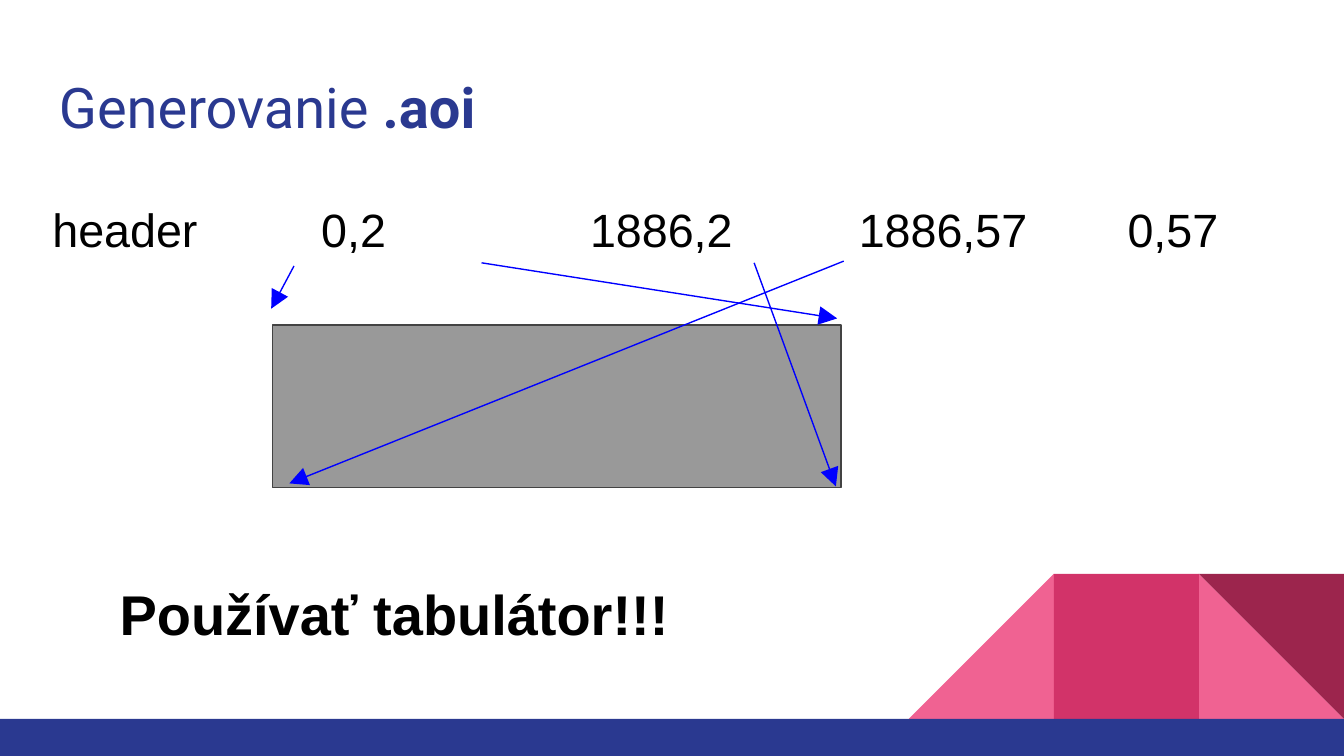
from lxml import etree
from pptx import Presentation
from pptx.dml.color import RGBColor
from pptx.enum import shapes as es, text as et
from pptx.oxml.ns import qn
from pptx.util import Pt

NAVY = RGBColor(0x2A, 0x39, 0x90)
PINK = RGBColor(0xF0, 0x62, 0x92)
ROSE = RGBColor(0xD2, 0x33, 0x69)
WINE = RGBColor(0x9C, 0x25, 0x4D)
GRAY = RGBColor(0x99, 0x99, 0x99)
EDGE = RGBColor(0x43, 0x43, 0x43)
BLUE = RGBColor(0x00, 0x00, 0xFF)
BLACK = RGBColor(0x00, 0x00, 0x00)

WIDE, HIGH = 720, 405
RECT = es.MSO_SHAPE.RECTANGLE
WEDGE = es.MSO_SHAPE.RIGHT_TRIANGLE


def add_form(slide, kind, box, fill, edge=None):
    form = slide.shapes.add_shape(kind, *map(Pt, box))
    form.shadow.inherit = False
    form.fill.solid()
    form.fill.fore_color.rgb = fill
    if edge is None:
        form.line.fill.background()
    else:
        form.line.color.rgb = edge
        form.line.width = Pt(0.75)
    return form


def add_label(slide, box, runs, size, face, color, anchor=et.MSO_ANCHOR.TOP):
    """Place one line of text; runs are (words, bold) pairs."""
    frame = slide.shapes.add_textbox(*map(Pt, box)).text_frame
    pad = Pt(7.2)
    style = dict(word_wrap=True, vertical_anchor=anchor, margin_left=pad,
                 margin_right=pad, margin_top=pad, margin_bottom=pad)
    for key, val in style.items():
        setattr(frame, key, val)
    para = frame.paragraphs[0]
    for words, bold in runs:
        run = para.add_run()
        run.text = words
        for key, val in dict(size=Pt(size), name=face, bold=bold).items():
            setattr(run.font, key, val)
        run.font.color.rgb = color
    return para


def set_tabs(para, step, count):
    stops = etree.SubElement(para._p.get_or_add_pPr(), qn("a:tabLst"))
    for num in range(1, count + 1):
        etree.SubElement(stops, qn("a:tab"), pos=str(Pt(step * num)),
                         algn="l")


def add_arrow(slide, start, end):
    line = slide.shapes.add_connector(es.MSO_CONNECTOR.STRAIGHT,
                                      *map(Pt, start + end))
    line.line.color.rgb = BLUE
    line.line.width = Pt(0.75)
    etree.SubElement(line.line._get_or_add_ln(), qn("a:tailEnd"),
                     type="triangle", w="lg", len="lg")
    etree.SubElement(line._element.spPr, qn("a:effectLst"))


def add_decor(slide, box):
    """Bar along the foot, with a row of square tiles above its right end."""
    left, top, width, height = box
    bar = 19.9
    tile = height - bar
    right = left + width

    def spot(col):
        return right - col * tile, top, tile, tile

    add_form(slide, WEDGE, spot(1), PINK)
    slope = add_form(slide, WEDGE, spot(3), PINK)
    slope._element.spPr.xfrm.set("flipH", "1")
    add_form(slide, RECT, spot(2), ROSE)
    add_form(slide, WEDGE, spot(1), WINE).rotation = 180
    add_form(slide, RECT, (left, top + tile, width, bar), NAVY)


def add_area(slide, box):
    """Gray area, with an arrow from each coordinate to its corner."""
    left, top, width, height = box
    add_form(slide, RECT, box, GRAY, EDGE)
    arrows = [
        ((11.5, -31.7), (-0.7, -8.8)),
        ((112, -33.4), (302.5, -3.6)),
        ((258, -33.4), (301.8, 86.4)),
        ((306, -34.3), (9, 84.8)),
    ]
    for ends in arrows:
        add_arrow(slide, *((left + x, top + y) for x, y in ends))


def build():
    deck = Presentation()
    deck.slide_width, deck.slide_height = Pt(WIDE), Pt(HIGH)
    slide = deck.slides.add_slide(deck.slide_layouts[6])

    # Foot of the slide
    add_decor(slide, (0, 307.4, WIDE, HIGH - 307.4))
    # Title
    add_label(slide, (24.5, 33.4, 671, 47.5),
              [("Generovanie ", False), (".aoi", True)],
              30, "Roboto", NAVY, et.MSO_ANCHOR.MIDDLE)
    # Sample row, split by tabs an inch apart
    row = add_label(slide, (21, 100.4, 710, 59),
                    [("header\t0,2\t\t1886,2\t1886,57\t0,57", False)],
                    25, "Arial", BLACK)
    set_tabs(row, 72, 9)
    # Closing advice
    add_label(slide, (57, 303.4, 504, 59),
              [("Používať tabulátor!!!", True)], 30, "Arial", BLACK)
    # Marked area
    add_area(slide, (146, 174.2, 304.6, 87.2))
    deck.save("out.pptx")


if __name__ == "__main__":
    build()
